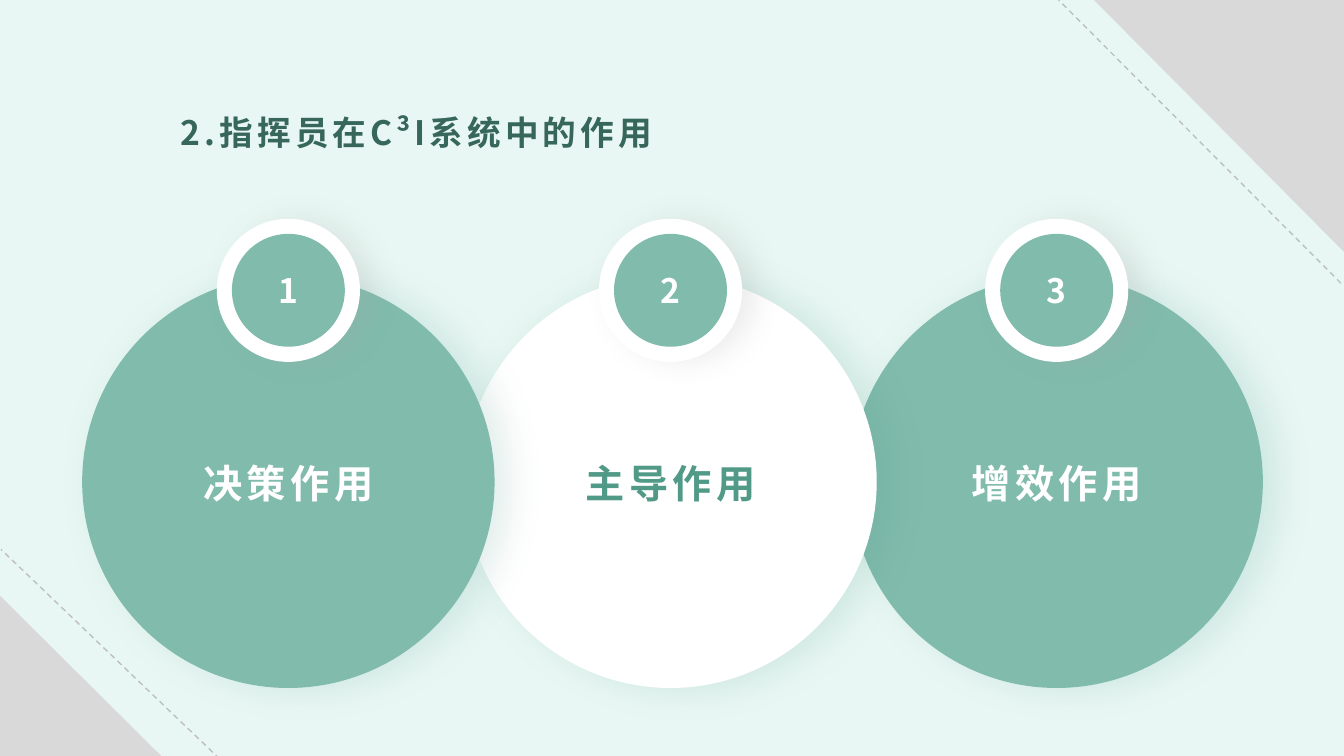
from dataclasses import dataclass

from lxml import etree
from pptx import Presentation
from pptx.dml.color import RGBColor
from pptx.enum.dml import MSO_LINE
from pptx.enum.shapes import MSO_CONNECTOR, MSO_SHAPE
from pptx.enum.text import MSO_ANCHOR, PP_ALIGN
from pptx.oxml.ns import qn
from pptx.util import Inches, Pt

DASH = MSO_LINE.DASH
STRAIGHT = MSO_CONNECTOR.STRAIGHT
OVAL, CORNER = MSO_SHAPE.OVAL, MSO_SHAPE.RIGHT_TRIANGLE
TOP, MIDDLE = MSO_ANCHOR.TOP, MSO_ANCHOR.MIDDLE
CENTER = PP_ALIGN.CENTER


@dataclass(frozen=True)
class Theme:
    font: str = "Noto Sans CJK SC"
    mint: str = "E8F7F3"
    green: str = "80BBAC"
    deep_green: str = "529A88"
    title_green: str = "37675A"
    white: str = "FFFFFF"
    corner_gray: str = "D9D9D9"
    dash_gray: str = "BFBFBF"
    shadow_gray: str = "A6A6A6"
    title_size: int = 24
    number_size: int = 24
    label_size: int = 28


theme = Theme()


def write(shape, text, size, color, anchor, spacing=0):
    frame = shape.text_frame
    frame.text = text
    frame.word_wrap = True
    frame.vertical_anchor = anchor
    paragraph = frame.paragraphs[0]
    paragraph.alignment = CENTER
    run = paragraph.runs[0]
    run.font.name = theme.font
    run.font.size = Pt(size)
    run.font.bold = True
    run.font.color.rgb = RGBColor.from_string(color)
    properties = run._r.get_or_add_rPr()
    etree.SubElement(properties, qn("a:ea"), typeface=theme.font)
    if spacing:
        properties.set("spc", str(round(spacing * 100)))


def fill_plain(shape, color, shadow=None):
    shape.fill.solid()
    shape.fill.fore_color.rgb = RGBColor.from_string(color)
    shape.line.fill.background()
    shape.shadow.inherit = False
    if shadow:
        shadow_color, opacity, blur, distance = shadow
        effects = shape._element.spPr.find(qn("a:effectLst"))
        outer = etree.SubElement(effects, qn("a:outerShdw"), blurRad=str(Pt(blur)),
                                 dist=str(Pt(distance)), dir="0", algn="l", rotWithShape="0")
        tint = etree.SubElement(outer, qn("a:srgbClr"), val=shadow_color)
        etree.SubElement(tint, qn("a:alpha"), val=str(opacity * 1000))


prs = Presentation()
prs.slide_width, prs.slide_height = Inches(13.33), Inches(7.5)
slide = prs.slides.add_slide(prs.slide_layouts[5])
shapes = slide.shapes
slide.background.fill.solid()
slide.background.fill.fore_color.rgb = RGBColor.from_string(theme.mint)

# Gray corners
outline = shapes.build_freeform(Inches(10.85), 0)
outline.add_line_segments([(Inches(13.33), 0), (Inches(13.33), Inches(2.5))], close=True)
top_corner = outline.convert_to_shape()
bottom_corner = shapes.add_shape(CORNER, 0, Inches(5.91), Inches(1.6), Inches(1.59))
for corner in (top_corner, bottom_corner):
    fill_plain(corner, theme.corner_gray)

# Dashed lines along the corners
for ends in ((13.3, 2.81, 10.5, 0), (2.18, 7.53, 0.01, 5.45)):
    dashed = shapes.add_connector(STRAIGHT, *map(Inches, ends))
    dashed.line.color.rgb = RGBColor.from_string(theme.dash_gray)
    dashed.line.width = Pt(1)
    dashed.line.dash_style = DASH
    etree.SubElement(dashed._element.spPr, qn("a:effectLst"))

# Title
title = shapes.title
title.left, title.top, title.width, title.height = map(Inches, (0.67, 1.08, 6.92, 0.83))
write(title, "2.指挥员在C³I系统中的作用", theme.title_size, theme.title_green, TOP, 2.9)
title.text_frame.margin_left = title.text_frame.margin_right = Inches(0.07)
title.text_frame.margin_top = title.text_frame.margin_bottom = Inches(0.03)

# Three roles, from right to left so that each disc overlaps the next
disc_shadow = (theme.deep_green, 16, 26, 10)
ring_shadow = (theme.shadow_gray, 20, 20, 10)
disc_y, badge_y = 4.78, 2.88
roles = [
    ("3", "增效作用", 10.48, theme.green, theme.white),
    ("2", "主导作用", 6.65, theme.white, theme.deep_green),
    ("1", "决策作用", 2.86, theme.green, theme.white),
]
for number, role, center_x, disc_color, role_color in roles:
    circles = [
        (4.09, disc_y, disc_color, disc_shadow),
        (1.42, badge_y, theme.white, ring_shadow),
        (1.12, badge_y, theme.green, None),
    ]
    for size, center_y, color, shadow in circles:
        circle = shapes.add_shape(OVAL, Inches(center_x - size / 2), Inches(center_y - size / 2),
                                  Inches(size), Inches(size))
        fill_plain(circle, color, shadow)
    # The last circle is the badge
    write(circle, number, theme.number_size, theme.white, MIDDLE)

    label = shapes.add_textbox(Inches(center_x - 1.48), Inches(3.83), Inches(2.96), Inches(1.91))
    write(label, role, theme.label_size, role_color, MIDDLE, 3.2)
    label.text_frame.paragraphs[0].space_after = Pt(8)

prs.save("out.pptx")
